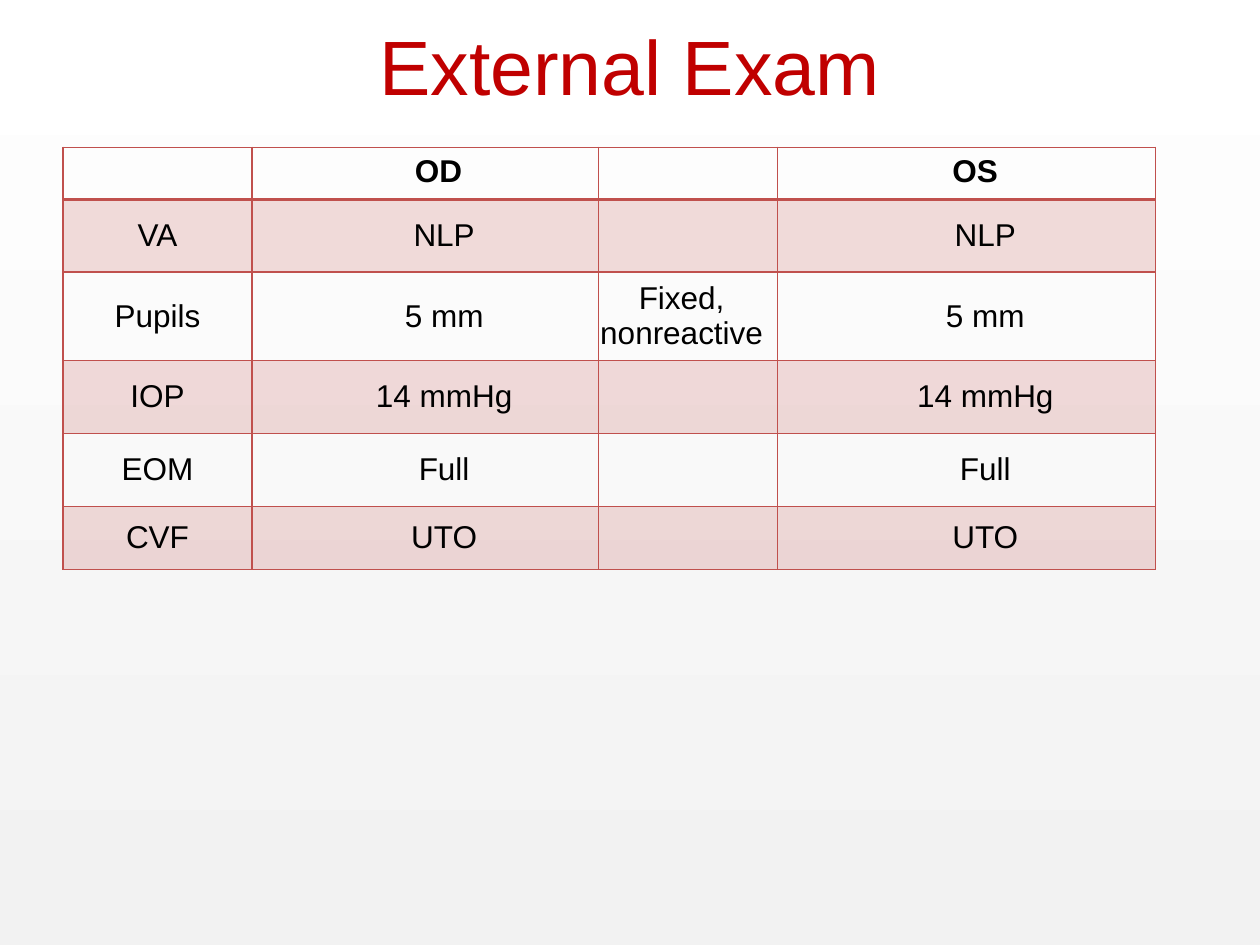
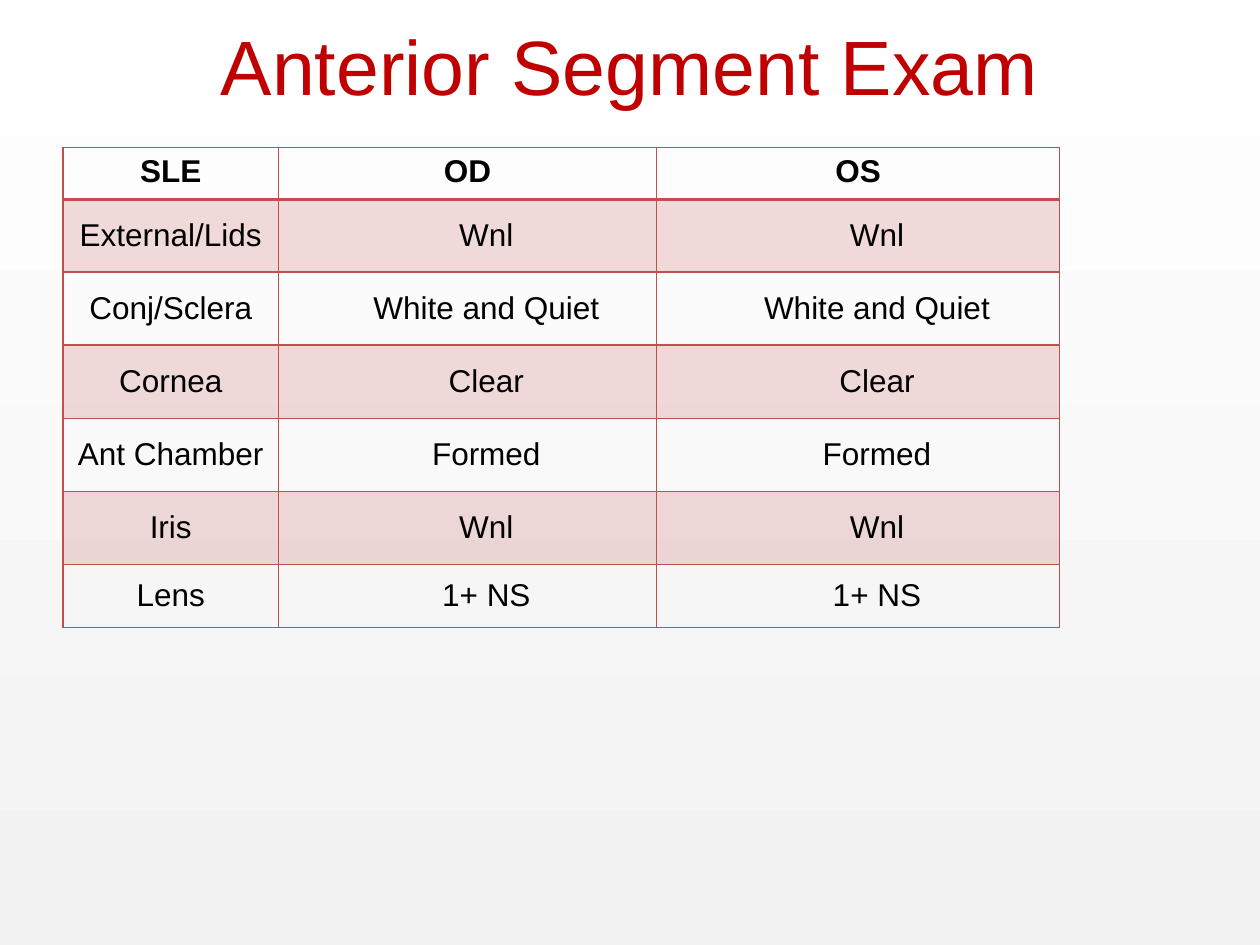
from lxml import etree
from pptx import Presentation
from pptx.dml.color import RGBColor
from pptx.enum.text import MSO_ANCHOR, PP_ALIGN
from pptx.oxml.ns import qn
from pptx.util import Inches, Pt

CENTER = PP_ALIGN.CENTER
TOP = MSO_ANCHOR.TOP
MIDDLE = MSO_ANCHOR.MIDDLE

FONT = "Arial"
TITLE_RED = "C00000"
TABLE_RED = "C0504D"
BLACK = "000000"
BACKGROUND_STOPS = ("F2F2F2", "FFFFFF")
BAND_OPACITY = 20

BLANK_LAYOUT = 6
TABLE_LEFT, TABLE_TOP = 0.5, 1.17
HEADER_HEIGHT, BODY_HEIGHT, LAST_HEIGHT = 0.41, 0.58, 0.5
DEFAULT_INSET, VALUE_INSET = 0.1, 0.4

EXTERNAL_ROWS = [
    ["", "OD", "", "OS"],
    ["VA", "NLP", "", "NLP"],
    ["Pupils", "5 mm", "Fixed, nonreactive", "5 mm"],
    ["IOP", "14 mmHg", "", "14 mmHg"],
    ["EOM", "Full", "", "Full"],
    ["CVF", "UTO", "", "UTO"],
]
ANTERIOR_ROWS = [
    ["SLE", "OD", "OS"],
    ["External/Lids", "Wnl", "Wnl"],
    ["Conj/Sclera", "White and Quiet", "White and Quiet"],
    ["Cornea", "Clear", "Clear"],
    ["Ant Chamber", "Formed", "Formed"],
    ["Iris", "Wnl", "Wnl"],
    ["Lens", "1+ NS", "1+ NS"],
]


def color(hex_string):
    return RGBColor.from_string(hex_string)


def add_run(paragraph, text, size, hex_color, bold=False):
    paragraph.alignment = CENTER
    run = paragraph.add_run()
    run.text = text
    run.font.name = FONT
    run.font.size = Pt(size)
    run.font.bold = bold
    run.font.color.rgb = color(hex_color)


def add_slide(presentation, title):
    slide = presentation.slides.add_slide(presentation.slide_layouts[BLANK_LAYOUT])
    fill = slide.background.fill
    fill.gradient()
    fill.gradient_angle = 90
    for stop, hex_color in zip(fill.gradient_stops, BACKGROUND_STOPS):
        stop.color.rgb = color(hex_color)
    box = slide.shapes.add_textbox(Inches(0.5), Inches(-0.11), Inches(9), Inches(1.25))
    box.text_frame.word_wrap = True
    box.text_frame.vertical_anchor = MIDDLE
    add_run(box.text_frame.paragraphs[0], title, 44, TITLE_RED)
    return slide


def set_borders(cell, top_width, bottom_width):
    properties = cell._tc.get_or_add_tcPr()
    sides = {"a:lnL": 1, "a:lnR": 1, "a:lnT": top_width, "a:lnB": bottom_width}
    for tag, width in sides.items():
        line = etree.SubElement(properties, qn(tag), w=str(Pt(width)))
        solid = etree.SubElement(line, qn("a:solidFill"))
        etree.SubElement(solid, qn("a:srgbClr"), val=TABLE_RED)


def set_fill(cell, banded):
    if not banded:
        cell.fill.background()
        return
    cell.fill.solid()
    cell.fill.fore_color.rgb = color(TABLE_RED)
    solid = cell._tc.tcPr.find(qn("a:solidFill"))
    etree.SubElement(solid[0], qn("a:alpha"), val=str(BAND_OPACITY * 1000))


def style_cell(cell, text, row_index, left_inset):
    is_header = row_index == 0
    set_borders(cell, 2 if row_index == 1 else 1, 2 if is_header else 1)
    set_fill(cell, row_index % 2 == 1)
    cell.vertical_anchor = TOP if is_header else MIDDLE
    cell.margin_left = Inches(left_inset)
    if text:
        add_run(cell.text_frame.paragraphs[0], text, 18, BLACK, is_header)


def add_exam_table(slide, rows, column_widths, header_insets, body_insets):
    heights = [HEADER_HEIGHT] + [BODY_HEIGHT] * (len(rows) - 2) + [LAST_HEIGHT]
    frame = slide.shapes.add_table(
        len(rows), len(column_widths), Inches(TABLE_LEFT), Inches(TABLE_TOP),
        Inches(sum(column_widths)), Inches(sum(heights)))
    table = frame.table
    table.first_row = False
    table.horz_banding = False
    for column, width in zip(table.columns, column_widths):
        column.width = Inches(width)
    for row, height in zip(table.rows, heights):
        row.height = Inches(height)
    for row_index, texts in enumerate(rows):
        insets = body_insets if row_index else header_insets
        for column_index, (text, inset) in enumerate(zip(texts, insets)):
            style_cell(table.cell(row_index, column_index), text, row_index, inset)


def main():
    presentation = Presentation()
    presentation.slide_width = Inches(10)
    presentation.slide_height = Inches(7.5)

    external = add_slide(presentation, "External Exam")
    add_exam_table(external, EXTERNAL_ROWS, [1.5, 2.75, 1.42, 3],
                   [DEFAULT_INSET, 0.31, DEFAULT_INSET, 0.24],
                   [DEFAULT_INSET, VALUE_INSET, 0, VALUE_INSET])

    anterior = add_slide(presentation, "Anterior Segment Exam")
    add_exam_table(anterior, ANTERIOR_ROWS, [1.71, 3, 3.2],
                   [DEFAULT_INSET] * 3,
                   [DEFAULT_INSET, VALUE_INSET, VALUE_INSET])

    presentation.save("out.pptx")


if __name__ == "__main__":
    main()
